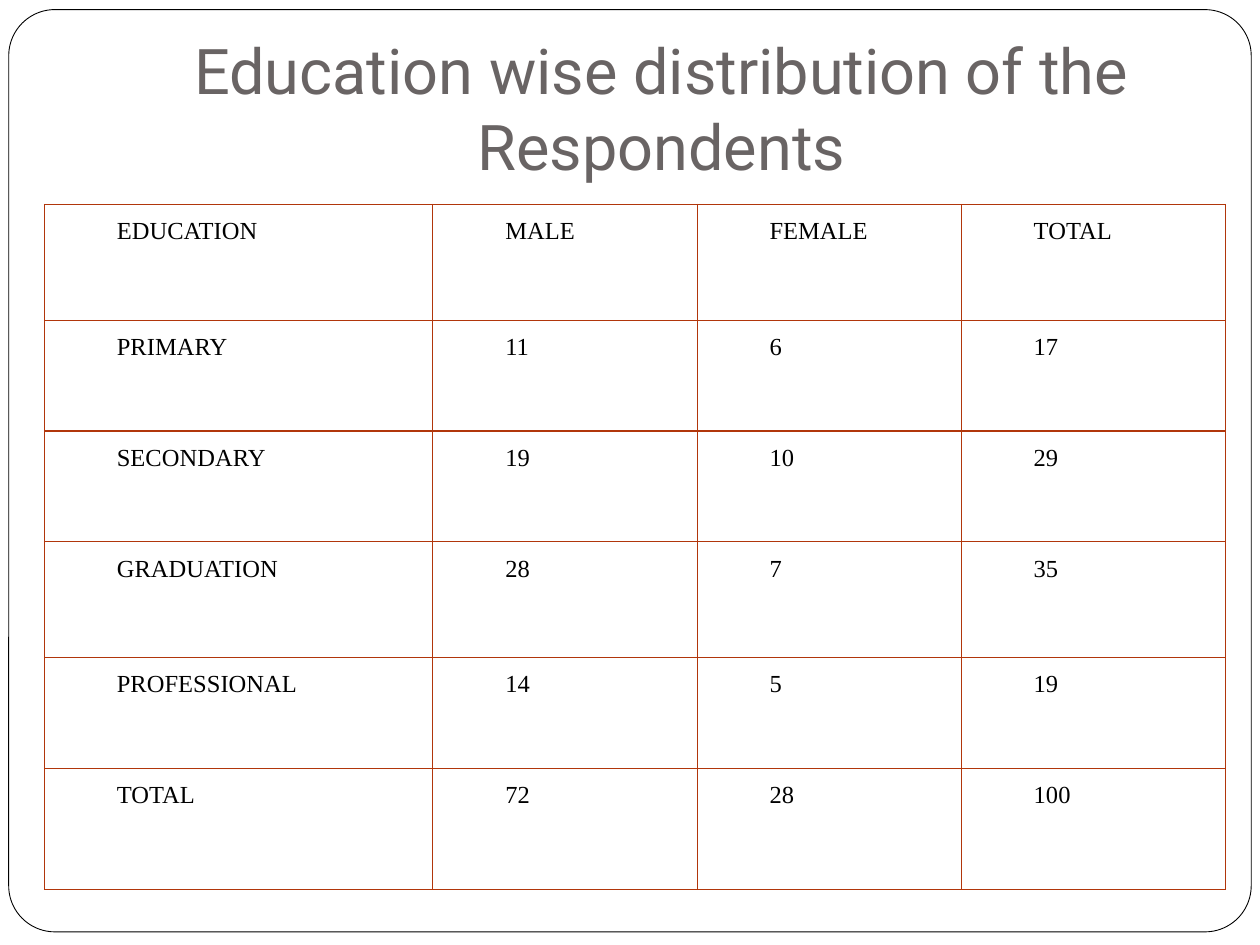
"""Build a slide with a table of respondents by education and gender."""
from lxml import etree
from pptx import Presentation
from pptx.dml.color import RGBColor
from pptx.enum.shapes import MSO_SHAPE
from pptx.enum.text import MSO_ANCHOR, MSO_AUTO_SIZE, PP_ALIGN
from pptx.oxml.ns import qn
from pptx.util import Pt

ROUNDED = MSO_SHAPE.ROUNDED_RECTANGLE
BOTTOM, TOP = MSO_ANCHOR.BOTTOM, MSO_ANCHOR.TOP
NO_FIT = MSO_AUTO_SIZE.NONE
CENTER, JUSTIFY = PP_ALIGN.CENTER, PP_ALIGN.JUSTIFY

COLORS = {"white": "FFFFFF", "black": "000000", "title": "696464", "border": "B1360B"}
ROWS = [
    ("EDUCATION", "MALE", "FEMALE", "TOTAL"),
    ("PRIMARY", "11", "6", "17"),
    ("SECONDARY", "19", "10", "29"),
    ("GRADUATION", "28", "7", "35"),
    ("PROFESSIONAL", "14", "5", "19"),
    ("TOTAL", "72", "28", "100"),
]
COL_WIDTHS = [222, 151, 151, 151]
ROW_HEIGHTS = [66.2, 63.3, 63.3, 66.2, 63.3, 69]


def color(name):
    return RGBColor.from_string(COLORS[name])


def add_borders(cell):
    tcPr = cell._tc.get_or_add_tcPr()
    for side in ("a:lnL", "a:lnR", "a:lnT", "a:lnB"):
        ln = etree.SubElement(tcPr, qn(side), w=str(Pt(0.75)))
        fill = etree.SubElement(ln, qn("a:solidFill"))
        etree.SubElement(fill, qn("a:srgbClr"), val=COLORS["border"])


prs = Presentation()
prs.slide_width, prs.slide_height = Pt(720), Pt(540)
s = prs.slides.add_slide(prs.slide_layouts[5])
s.background.fill.solid()
s.background.fill.fore_color.rgb = color("white")

frame = s.shapes.add_shape(ROUNDED, Pt(5), Pt(5.5), Pt(710), Pt(527))
frame.adjustments[0] = 0.05
frame.shadow.inherit = False
frame.fill.solid()
frame.fill.fore_color.rgb = color("white")
frame.line.color.rgb = color("black")
frame.line.width = Pt(0.5)
s.shapes._spTree.insert(2, frame._element)

title = s.shapes.title
title.left, title.top, title.width, title.height = Pt(72), Pt(21.6), Pt(612), Pt(90)
tf = title.text_frame
tf.text = "Education wise distribution of the Respondents"
tf.word_wrap = True
tf.auto_size = NO_FIT
tf.vertical_anchor = BOTTOM
tf.margin_left = tf.margin_right = tf.margin_bottom = Pt(7.2)
tf.margin_top = Pt(3.6)
p = tf.paragraphs[0]
p.alignment = CENTER
p.font.name, p.font.size = "Roboto", Pt(36)
p.font.color.rgb = color("title")

table = s.shapes.add_table(len(ROWS), len(COL_WIDTHS), Pt(25.4), Pt(116.8),
                           Pt(sum(COL_WIDTHS)), Pt(sum(ROW_HEIGHTS))).table
table.first_row = table.horz_banding = False
for col, width in zip(table.columns, COL_WIDTHS):
    col.width = Pt(width)
for row, height, values in zip(table.rows, ROW_HEIGHTS, ROWS):
    row.height = Pt(height)
    for cell, value in zip(row.cells, values):
        add_borders(cell)
        cell.fill.background()
        cell.vertical_anchor = TOP
        cell.margin_left = cell.margin_right = Pt(5.4)
        cell.margin_top = cell.margin_bottom = Pt(0)
        cell.text = value
        p = cell.text_frame.paragraphs[0]
        p.alignment = JUSTIFY
        p.line_spacing = 1.5
        p.space_after = Pt(10)
        p.font.name, p.font.size = "Times New Roman", Pt(14)
        p.font.color.rgb = color("black")
        pPr = p._p.get_or_add_pPr()
        pPr.set("marL", str(Pt(36)))
        pPr.set("indent", "0")

prs.save("out.pptx")
